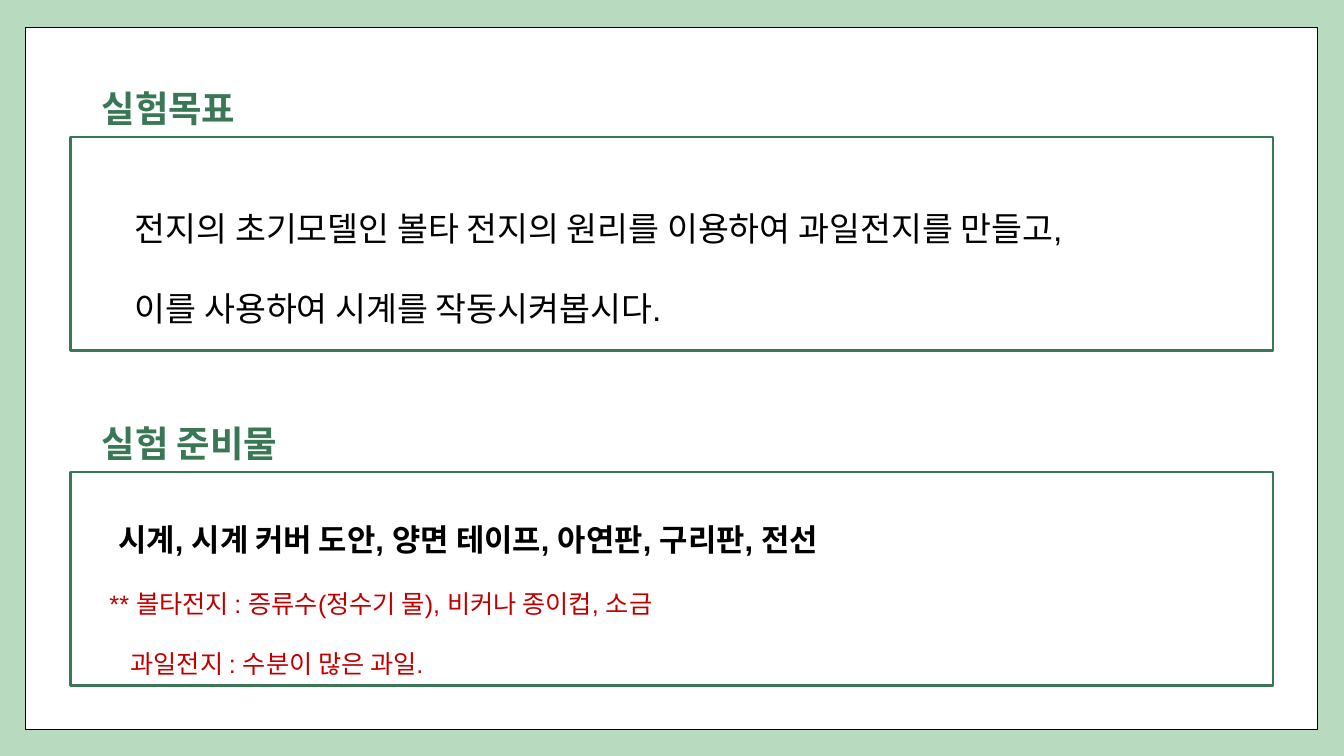
from dataclasses import dataclass

from pptx import Presentation
from pptx import util as u
from pptx.dml.color import RGBColor
from pptx.enum import shapes, text


@dataclass(frozen=True)
class Theme:
    mint: RGBColor = RGBColor(0xB8, 0xDA, 0xBF)
    green: RGBColor = RGBColor(0x39, 0x77, 0x55)
    white: RGBColor = RGBColor(0xFF, 0xFF, 0xFF)
    black: RGBColor = RGBColor(0, 0, 0)
    red: RGBColor = RGBColor(0xC0, 0, 0)
    heading_font: str = "Calibri"
    body_font: str = "Arial"
    heading: int = 26
    goal: int = 24
    supplies: int = 22
    note: int = 18


THEME = Theme()


def add_panel(slide, left, top, width, height, outline, weight):
    panel = slide.shapes.add_shape(
        shapes.MSO_SHAPE.RECTANGLE, u.Cm(left), u.Cm(top), u.Cm(width), u.Cm(height))
    panel.shadow.inherit = False
    panel.fill.solid()
    panel.fill.fore_color.rgb = THEME.white
    panel.line.color.rgb = outline
    panel.line.width = u.Pt(weight)


def add_frame(slide, left, top, width, height):
    box = slide.shapes.add_textbox(u.Cm(left), u.Cm(top), u.Cm(width), u.Cm(height))
    frame = box.text_frame
    frame.word_wrap = True
    return frame


def add_run(paragraph, wording, font, size, color, bold=False):
    run = paragraph.add_run()
    run.text = wording
    run.font.name = font
    run.font.size = u.Pt(size)
    run.font.color.rgb = color
    run.font.bold = bold


def add_heading(slide, wording, top):
    frame = add_frame(slide, 2.31, top, 5.84, 1.22)
    frame.margin_left = frame.margin_right = u.Cm(0.25)
    frame.margin_top = frame.margin_bottom = u.Cm(0.25)
    add_run(frame.paragraphs[0], wording, THEME.heading_font, THEME.heading,
            THEME.green, bold=True)


def add_body(slide, left, top, width, height, lines):
    """Write double-spaced lines of (wording, size, color, bold, indent in cm)."""
    frame = add_frame(slide, left, top, width, height)
    frame.auto_size = text.MSO_AUTO_SIZE.SHAPE_TO_FIT_TEXT
    for number, (wording, size, color, bold, indent) in enumerate(lines):
        paragraph = frame.add_paragraph() if number else frame.paragraphs[0]
        paragraph.line_spacing = 2.0
        if indent:
            paragraph._p.get_or_add_pPr().set("marL", str(u.Cm(indent)))
        add_run(paragraph, wording, THEME.body_font, size, color, bold)


def main():
    deck = Presentation()
    deck.slide_width, deck.slide_height = u.Cm(33.87), u.Cm(19.05)
    slide = deck.slides.add_slide(deck.slide_layouts[6])
    slide.background.fill.solid()
    slide.background.fill.fore_color.rgb = THEME.mint
    add_panel(slide, 0.64, 0.69, 32.56, 17.7, THEME.black, 1)

    section_step = 8.44
    for section, heading in enumerate(("실험목표", "실험 준비물")):
        offset = section * section_step
        add_heading(slide, heading, 1.91 + offset)
        add_panel(slide, 1.78, 3.45 + offset, 30.3, 5.38, THEME.green, 1.75)

    add_body(slide, 3.15, 4.09, 27.58, 4.04, [
        ("전지의 초기모델인 볼타 전지의 원리를 이용하여 과일전지를 만들고,",
         THEME.goal, THEME.black, False, 0),
        ("이를 사용하여 시계를 작동시켜봅시다.", THEME.goal, THEME.black, False, 0),
    ])
    add_body(slide, 2.51, 12.07, 29.29, 4.98, [
        ("시계, 시계 커버 도안, 양면 테이프, 아연판, 구리판, 전선",
         THEME.supplies, THEME.black, True, 0.22),
        ("** 볼타전지 : 증류수(정수기 물), 비커나 종이컵, 소금",
         THEME.note, THEME.red, False, 0),
        ("과일전지 : 수분이 많은 과일.", THEME.note, THEME.red, False, 0.53),
    ])
    deck.save("out.pptx")


if __name__ == "__main__":
    main()
